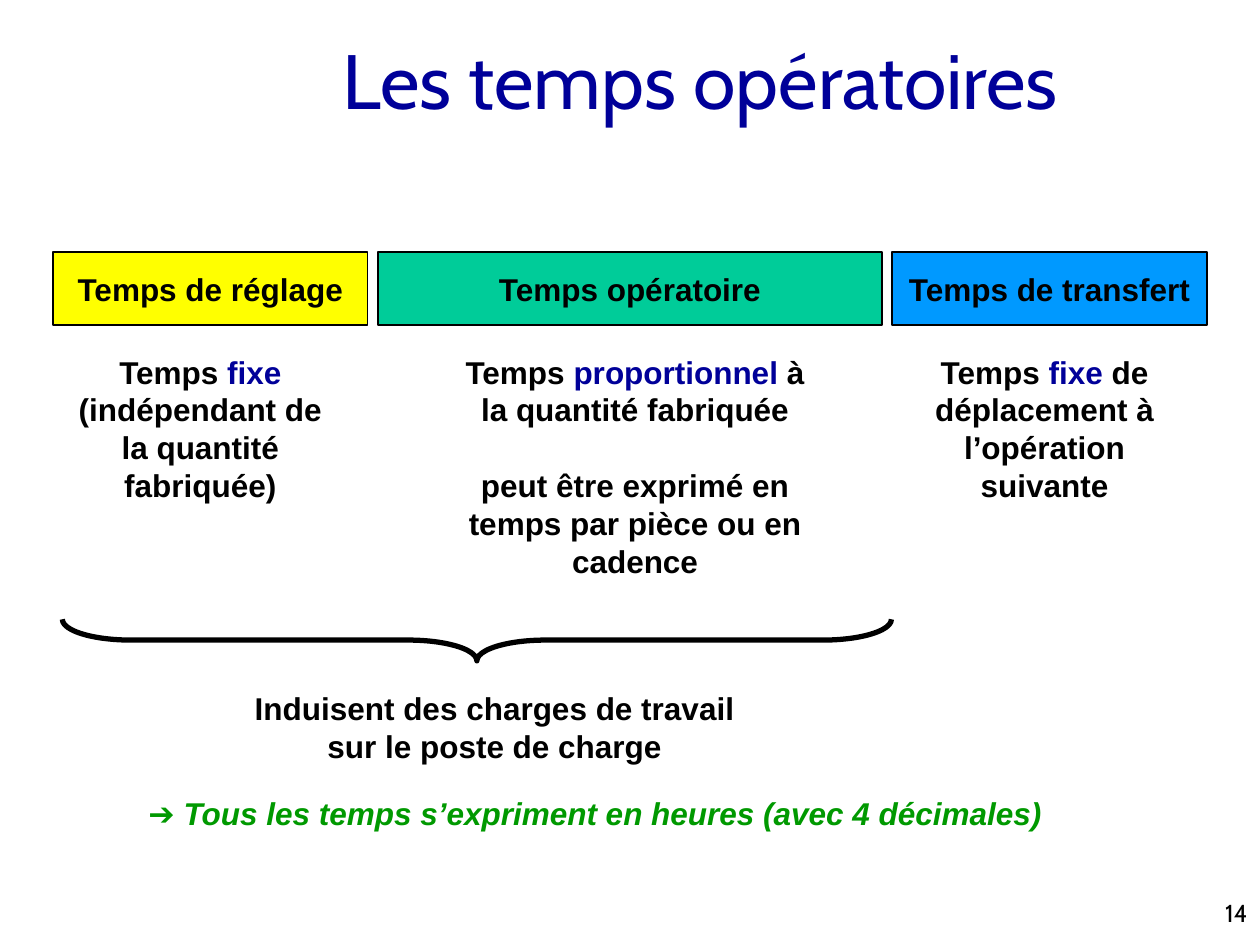
from pptx import Presentation
from pptx.dml.color import RGBColor
from pptx.enum.shapes import MSO_SHAPE
from pptx.enum.text import MSO_ANCHOR, PP_ALIGN
from pptx.util import Inches, Pt

BLACK, NAVY, GREEN = "000000", "000099", "009900"
LINE_PITCH = 21.6

TITLE = "Les temps opératoires"
PAGE_NUMBER = "14"
BAR_LEFT, BAR_TOP, BAR_HEIGHT, BAR_GAP = 0.42, 2, 0.58, 0.08
BARS = [
    ("Temps de réglage", 2.5, "FFFF00"),
    ("Temps opératoire", 4, "00CC99"),
    ("Temps de transfert", 2.5, "0099FF"),
]
NOTES = [
    ((0.5, 2.75, 2.18, 1.3), [
        [("Temps ", BLACK), ("fixe", NAVY)],
        [("(indépendant de la quantité fabriquée)", BLACK)],
    ], 0),
    ((3.58, 2.75, 2.92, 1.9), [
        [("Temps ", BLACK), ("proportionnel", NAVY), (" à la quantité fabriquée", BLACK)],
        [("peut être exprimé en temps par pièce ou en cadence", BLACK)],
    ], LINE_PITCH),
    ((7.08, 2.75, 2.42, 1.3), [
        [("Temps ", BLACK), ("fixe", NAVY), (" de déplacement à l’opération suivante", BLACK)],
    ], 0),
]
LOAD_LINES = [
    [("Induisent des charges de travail", BLACK)],
    [("sur le poste de charge", BLACK)],
]
CONCLUSION = [("➔ ", False), ("Tous les temps s’expriment en heures (avec 4 décimales)", True)]


def colour(value):
    """Turn a hex string into a colour."""
    return RGBColor.from_string(value)


def add_span(para, text, shade=BLACK, size=18, font="Arial", bold=True, italic=False):
    """Append one formatted run to a paragraph."""
    span = para.add_run()
    span.text = text
    span.font.name = font
    span.font.size = Pt(size)
    span.font.bold = bold
    span.font.italic = italic
    span.font.color.rgb = colour(shade)


def add_box(page, place, wrap=True):
    """Add a text box and return its text frame."""
    frame = page.shapes.add_textbox(*map(Inches, place)).text_frame
    frame.word_wrap = wrap
    return frame


def fill_centred(frame, lines, gap=0):
    """Write centred paragraphs with a gap between them."""
    for index, spans in enumerate(lines):
        para = frame.add_paragraph() if index else frame.paragraphs[0]
        para.alignment = PP_ALIGN.CENTER
        para.line_spacing = Pt(LINE_PITCH)
        para.space_before = Pt(gap if index else 0)
        for text, shade in spans:
            add_span(para, text, shade)


def add_outlined(page, kind, place, width):
    """Add a preset shape with a black outline and no shadow."""
    shape = page.shapes.add_shape(kind, *map(Inches, place))
    shape.shadow.inherit = False
    shape.line.color.rgb = colour(BLACK)
    shape.line.width = Pt(width)
    return shape


def add_title(page):
    """Place and format the slide title."""
    title = page.shapes.title
    title.left, title.top, title.width, title.height = map(Inches, (0, 0, 8.5, 1.25))
    title.text_frame.vertical_anchor = MSO_ANCHOR.MIDDLE
    para = title.text_frame.paragraphs[0]
    para.alignment = PP_ALIGN.RIGHT
    add_span(para, TITLE, NAVY, 44, "Cabin", False)


def add_bars(page):
    """Lay the coloured bars side by side."""
    left = BAR_LEFT
    for label, width, shade in BARS:
        bar = add_outlined(page, MSO_SHAPE.RECTANGLE, (left, BAR_TOP, width, BAR_HEIGHT), 0.75)
        bar.fill.solid()
        bar.fill.fore_color.rgb = colour(shade)
        frame = bar.text_frame
        frame.word_wrap = False
        frame.vertical_anchor = MSO_ANCHOR.MIDDLE
        para = frame.paragraphs[0]
        para.alignment = PP_ALIGN.CENTER
        add_span(para, label)
        left += width + BAR_GAP


def add_brace(page):
    """Add the brace that groups the first two times."""
    brace = add_outlined(page, MSO_SHAPE.LEFT_BRACE, (3.62, 1.79, 0.33, 6.58), 3)
    brace.fill.background()
    brace.rotation = 270
    brace.adjustments[0] = 1.65
    brace.adjustments[1] = 0.5


def main():
    """Build and save the slide."""
    deck = Presentation()
    deck.slide_width, deck.slide_height = Inches(10), Inches(7.5)
    page = deck.slides.add_slide(deck.slide_layouts[5])
    add_title(page)
    add_bars(page)
    for place, lines, gap in NOTES:
        fill_centred(add_box(page, place), lines, gap)
    add_brace(page)
    fill_centred(add_box(page, (1.92, 5.42, 4.01, 0.7), False), LOAD_LINES)
    para = add_box(page, (1.08, 6.25, 7.36, 0.4), False).paragraphs[0]
    para.alignment = PP_ALIGN.LEFT
    para.line_spacing = Pt(LINE_PITCH)
    for text, italic in CONCLUSION:
        add_span(para, text, GREEN, italic=italic)
    para = add_box(page, (7.92, 7.08, 2.08, 0.25)).paragraphs[0]
    para.alignment = PP_ALIGN.RIGHT
    add_span(para, PAGE_NUMBER, size=14, font="Cabin", bold=False)
    deck.save("out.pptx")


if __name__ == "__main__":
    main()
